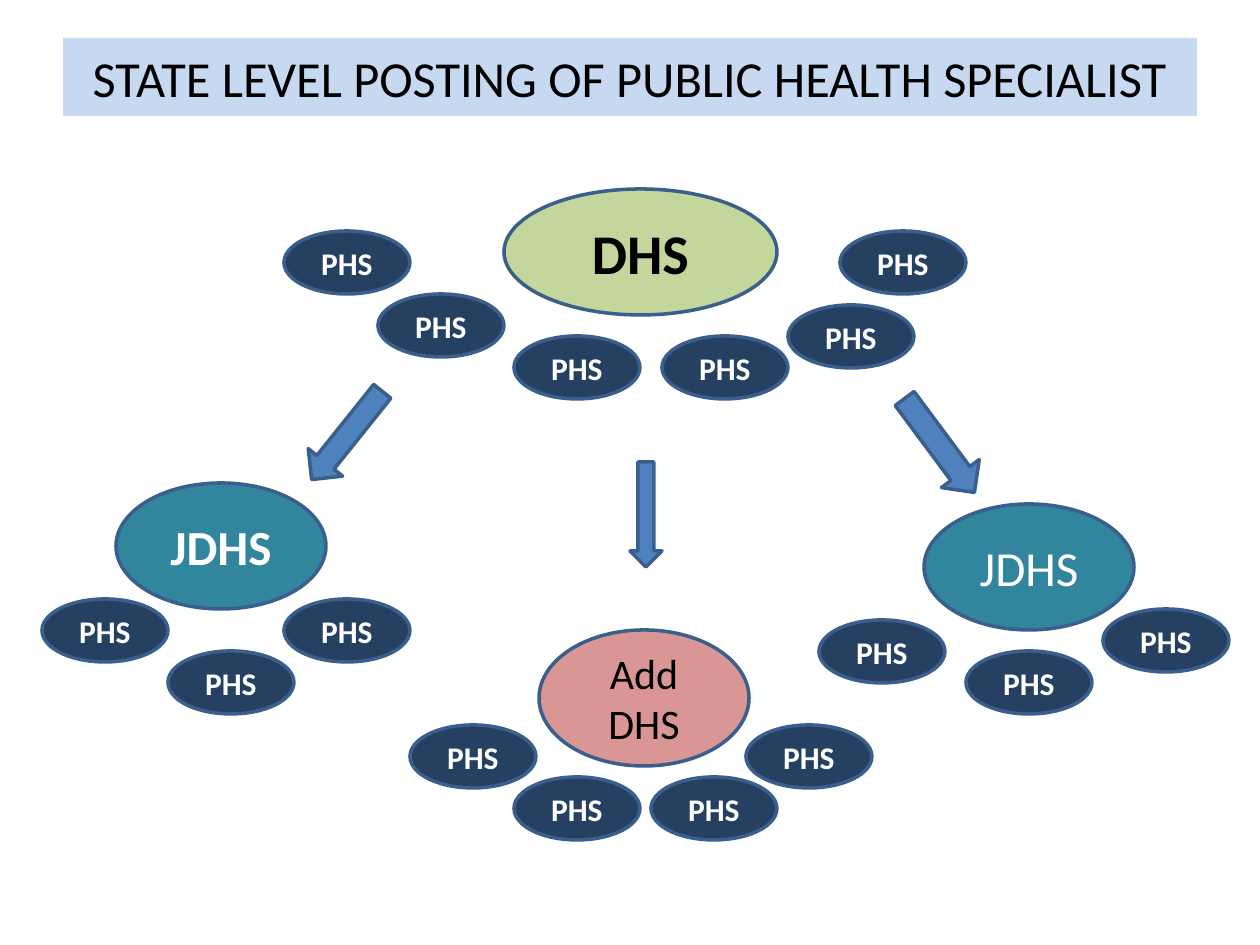
"""Build the slide on state level posting of public health specialists."""
from pptx import Presentation
from pptx.dml.color import RGBColor
from pptx.enum.shapes import MSO_SHAPE
from pptx.enum.text import MSO_ANCHOR, MSO_AUTO_SIZE, PP_ALIGN
from pptx.util import Emu, Pt

OVAL, DOWN, RIGHT = MSO_SHAPE.OVAL, MSO_SHAPE.DOWN_ARROW, MSO_SHAPE.RIGHT_ARROW
CENTER, MIDDLE, NO_FIT = PP_ALIGN.CENTER, MSO_ANCHOR.MIDDLE, MSO_AUTO_SIZE.NONE

BLACK = RGBColor(0x00, 0x00, 0x00)
WHITE = RGBColor(0xFF, 0xFF, 0xFF)
PALE_BLUE = RGBColor(0xC6, 0xD9, 0xF1)
GREEN = RGBColor(0xC3, 0xD6, 0x9B)
TEAL = RGBColor(0x31, 0x85, 0x9C)
ROSE = RGBColor(0xD9, 0x96, 0x94)
NAVY = RGBColor(0x25, 0x40, 0x61)
BLUE = RGBColor(0x4F, 0x81, 0xBD)
OUTLINE = RGBColor(0x3A, 0x5F, 0x8C)

EMU_PER_PX = 914400 / 126
TITLE = "STATE LEVEL POSTING OF PUBLIC HEALTH SPECIALIST"
TITLE_BOX = (63, 38, 1134, 78)
SPECIALIST_SIZE = (126, 63)

OFFICES = [
    {"label": "DHS", "box": (504, 189, 273, 126), "fill": GREEN,
     "font": {"size": 32, "bold": True, "color": BLACK},
     "specialists": [(284, 231), (378, 294), (514, 336), (662, 336), (788, 305), (840, 231)]},
    {"label": "JDHS", "box": (116, 483, 210, 126), "fill": TEAL,
     "font": {"size": 28, "bold": True, "color": WHITE},
     "specialists": [(42, 599), (168, 651), (284, 599)]},
    {"label": "Add DHS", "box": (539, 630, 210, 136), "fill": ROSE,
     "font": {"size": 24, "bold": False, "color": BLACK},
     "specialists": [(410, 725), (514, 777), (651, 777), (746, 725)]},
    {"label": "JDHS", "box": (924, 504, 210, 126), "fill": TEAL,
     "font": {"size": 28, "bold": False, "color": WHITE},
     "specialists": [(819, 620), (966, 651), (1103, 609)]},
]
SPECIALIST_FONT = {"size": 18, "bold": True, "color": WHITE}
ARROWS = [
    (DOWN, (325, 379, 44, 113), 38.7),
    (DOWN, (630, 462, 32, 105), 0),
    (RIGHT, (881, 422, 117, 47), 53.4),
]


def px(length):
    return Emu(round(length * EMU_PER_PX))


def write(shape, text, size, bold, color):
    frame = shape.text_frame
    for name, value in {"word_wrap": True, "auto_size": NO_FIT, "vertical_anchor": MIDDLE}.items():
        setattr(frame, name, value)
    para = frame.paragraphs[0]
    para.alignment = CENTER
    span = para.add_run()
    span.text = text
    for name, value in {"name": "Calibri", "size": Pt(size), "bold": bold}.items():
        setattr(span.font, name, value)
    span.font.color.rgb = color


def paint(shape, fill):
    shape.fill.solid()
    shape.fill.fore_color.rgb = fill


def add_outlined(page, kind, box, fill):
    shape = page.shapes.add_shape(kind, *map(px, box))
    shape.shadow.inherit = False
    paint(shape, fill)
    shape.line.color.rgb = OUTLINE
    shape.line.width = Pt(2)
    return shape


def add_title(page):
    title = page.shapes.title
    for name, value in zip(("left", "top", "width", "height"), TITLE_BOX):
        setattr(title, name, px(value))
    paint(title, PALE_BLUE)
    write(title, TITLE, 28.8, False, BLACK)


def main():
    deck = Presentation()
    deck.slide_width, deck.slide_height = px(1260), px(945)
    page = deck.slides.add_slide(deck.slide_layouts[5])
    add_title(page)
    for office in OFFICES:
        write(add_outlined(page, OVAL, office["box"], office["fill"]),
              office["label"], **office["font"])
    for kind, box, angle in ARROWS:
        add_outlined(page, kind, box, BLUE).rotation = angle
    for office in OFFICES:
        for corner in office["specialists"]:
            write(add_outlined(page, OVAL, corner + SPECIALIST_SIZE, NAVY),
                  "PHS", **SPECIALIST_FONT)
    deck.save("out.pptx")


if __name__ == "__main__":
    main()
